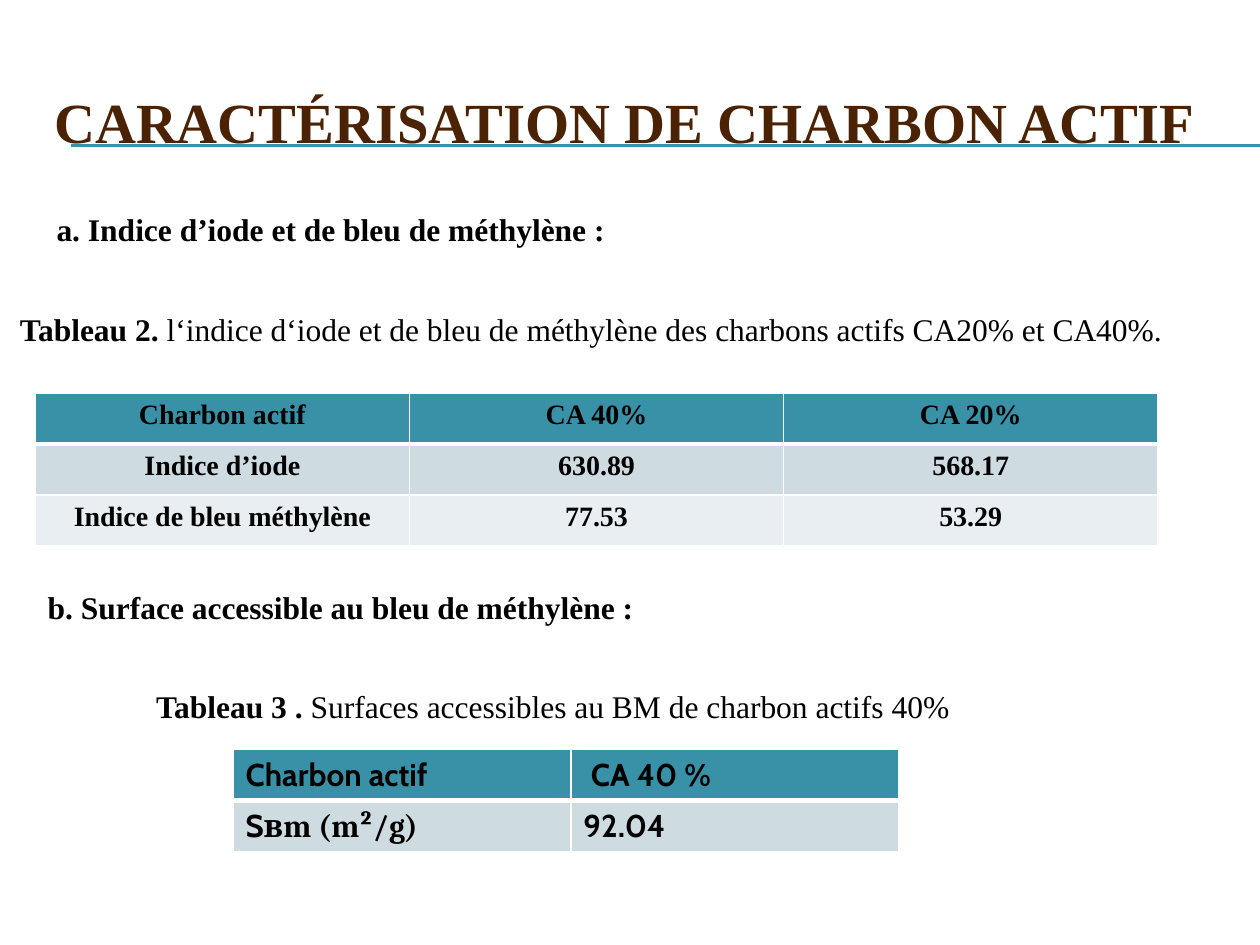
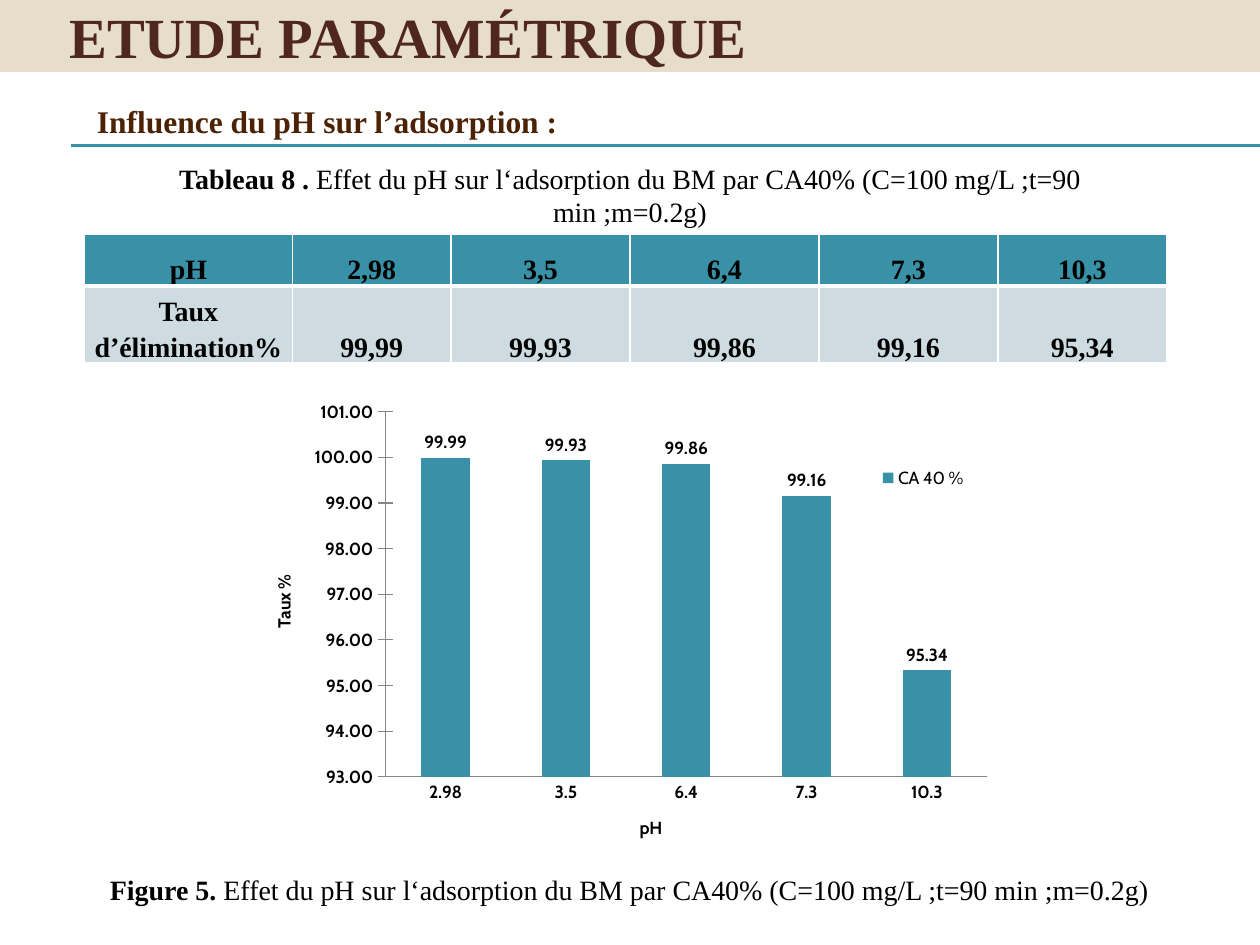
import lxml.etree
import pptx
import pptx.chart.data
import pptx.dml.color
import pptx.enum.chart
import pptx.enum.shapes
import pptx.enum.text
import pptx.oxml
import pptx.oxml.ns
import pptx.util

COLORS = {
    name: pptx.dml.color.RGBColor.from_string(value)
    for name, value in {
        "teal": "3891A7",
        "band": "CEDCE1",
        "pale": "E8EEF1",
        "sand": "E7DEC9",
        "brown": "4B2203",
        "maroon": "4F271C",
        "black": "000000",
        "white": "FFFFFF",
        "axis": "868686",
    }.items()
}
SERIF = "Times New Roman"
SANS = "Cabin"
CENTER = pptx.enum.text.PP_ALIGN.CENTER
LEFT = pptx.enum.text.PP_ALIGN.LEFT
qn = pptx.oxml.ns.qn

presentation = pptx.Presentation()
presentation.slide_width = pptx.util.Inches(10)
presentation.slide_height = pptx.util.Inches(7.5)
column = presentation.slide_width / 100
row = presentation.slide_height / 75


def add_text(slide, box, label, rest="", size=18, color="black", align=LEFT, spacing=None):
    left, top, width, height = box
    shape = slide.shapes.add_textbox(
        int(left * column), int(top * row), int(width * column), int(height * row)
    )
    shape.text_frame.word_wrap = True
    paragraph = shape.text_frame.paragraphs[0]
    paragraph.alignment = align
    paragraph.line_spacing = spacing
    paragraph.font.name = SERIF
    paragraph.font.size = pptx.util.Pt(size)
    paragraph.font.color.rgb = COLORS[color]
    for text, bold in ((label, True), (rest, False)):
        if text:
            run = paragraph.add_run()
            run.text = text
            run.font.bold = bold


def add_table(slide, left, top, widths, heights, rows, font=SERIF, size=16, align=CENTER):
    table = slide.shapes.add_table(
        len(rows), len(widths), int(left * column), int(top * row),
        int(sum(widths) * column), int(sum(heights) * row),
    ).table
    for table_column, width in zip(table.columns, widths):
        table_column.width = int(width * column)
    for index, (table_row, height, texts) in enumerate(zip(table.rows, heights, rows)):
        table_row.height = int(height * row)
        for cell, text in zip(table_row.cells, texts):
            cell.fill.solid()
            cell.fill.fore_color.rgb = COLORS[("teal", "band", "pale")[index]]
            paragraph = cell.text_frame.paragraphs[0]
            paragraph.alignment = align
            run = paragraph.add_run()
            run.text = text
            run.font.name = font
            run.font.size = pptx.util.Pt(size)
            run.font.bold = True
            run.font.color.rgb = COLORS["black"]
            properties = cell._tc.get_or_add_tcPr()
            weights = (1, 1, 3 if index == 1 else 1, 3 if index == 0 else 1)
            for position, (side, weight) in enumerate(zip("LRTB", weights)):
                border = lxml.etree.Element(qn(f"a:ln{side}"), w=str(pptx.util.Pt(weight)))
                fill = lxml.etree.SubElement(border, qn("a:solidFill"))
                lxml.etree.SubElement(fill, qn("a:srgbClr"), val=str(COLORS["white"]))
                properties.insert(position, border)
    return table


titles = (
    ("CARACTÉRISATION DE CHARBON ACTIF", "brown", (3.3, 5, 95, 9.2), 1),
    ("ETUDE PARAMÉTRIQUE", "maroon", (0, 0, 100, 5.7), 5.5),
)
for text, color, (left, top, width, height), indent in titles:
    slide = presentation.slides.add_slide(presentation.slide_layouts[5])
    title = slide.shapes.title
    title.left, title.top = int(left * column), int(top * row)
    title.width, title.height = int(width * column), int(height * row)
    title.text_frame.text = text
    title.text_frame.auto_size = pptx.enum.text.MSO_AUTO_SIZE.NONE
    title.text_frame.vertical_anchor = pptx.enum.text.MSO_ANCHOR.MIDDLE
    title.text_frame.margin_left = int(indent * column)
    paragraph = title.text_frame.paragraphs[0]
    paragraph.alignment = LEFT
    paragraph.font.name = SERIF
    paragraph.font.size = pptx.util.Pt(32.4)
    paragraph.font.bold = True
    paragraph.font.color.rgb = COLORS[color]
    for height in (11.5, 11.6):
        rule = slide.shapes.add_connector(
            pptx.enum.shapes.MSO_CONNECTOR.STRAIGHT,
            int(5.6 * column), int(height * row), int(100 * column), int(height * row),
        )
        rule.line.color.rgb = COLORS["teal"]
        rule.line.width = pptx.util.Pt(0.75)
        lxml.etree.SubElement(rule.element.spPr, qn("a:effectLst"))
        title.element.addprevious(rule.element)

characterisation, parametric = presentation.slides
parametric.shapes.title.fill.solid()
parametric.shapes.title.fill.fore_color.rgb = COLORS["sand"]

add_text(characterisation, (3.5, 16.2, 55.9, 7.1), "a. Indice d’iode et de bleu de méthylène :")
add_text(
    characterisation, (0.6, 24.1, 95.9, 4), "Tableau 2.",
    " l‘indice d‘iode et de bleu de méthylène des charbons actifs CA20% et CA40%.",
)
add_table(
    characterisation, 2.8, 31.2, [29.7] * 3, [4.05] * 3,
    (
        ("Charbon actif", "CA 40%", "CA 20%"),
        ("Indice d’iode", "630.89", "568.17"),
        ("Indice de bleu méthylène", "77.53", "53.29"),
    ),
)
add_text(characterisation, (2.8, 46.2, 50, 7.1), "b. Surface accessible au bleu de méthylène :")
add_text(
    characterisation, (11.4, 54, 67, 4), "Tableau 3 . ",
    "Surfaces accessibles au BM de charbon actifs 40%",
)
surface_table = add_table(
    characterisation, 18.5, 59.5, (26.8, 26), [4.05] * 2,
    (("Charbon actif", "CA 40 %"), ("S", "92.04")),
    font=SANS, size=18, align=LEFT,
)
surface_table.cell(0, 1).margin_left = int(1.6 * column)
unit = surface_table.cell(1, 0).text_frame.paragraphs[0].add_run()
unit.text = "ʙm (m²/g)"
unit.font.name = "Cambria"
unit.font.size = pptx.util.Pt(18)
unit.font.bold = True
unit.font.color.rgb = COLORS["black"]

levels = (2.98, 3.5, 6.4, 7.3, 10.3)
rates = (99.99, 99.93, 99.86, 99.16, 95.34)
caption = " Effet du pH sur l‘adsorption du BM par CA40% (C=100 mg/L ;t=90 min ;m=0.2g)"

add_text(
    parametric, (6.7, 7.6, 40.2, 4), "Influence du pH sur l’adsorption :", color="brown"
)
add_text(parametric, (7.5, 12.3, 85, 6.4), "Tableau 8 .", caption, size=16, align=CENTER)
rate_table = add_table(
    parametric, 6.7, 18.6, (16.5, 12.6, 14.2, 15, 14.2, 13.4), (4.1, 4.5),
    (
        ["pH"] + [str(level).replace(".", ",") for level in levels],
        ["Taux d’élimination%"] + [str(rate).replace(".", ",") for rate in rates],
    ),
)
for cell in rate_table.iter_cells():
    cell.vertical_anchor = pptx.enum.text.MSO_ANCHOR.BOTTOM
    cell.margin_left = cell.margin_right = int(0.5 * column)
    cell.margin_top = cell.margin_bottom = 0
    cell.text_frame.paragraphs[0].line_spacing = 1.15

chart_data = pptx.chart.data.CategoryChartData()
chart_data.categories = [str(level) for level in levels]
chart_data.add_series("CA 40 %", rates)
chart = parametric.shapes.add_chart(
    pptx.enum.chart.XL_CHART_TYPE.COLUMN_CLUSTERED,
    int(20.1 * column), int(31.2 * row), int(58.3 * column), int(36.7 * row), chart_data,
).chart
chart.has_title = False
chart.font.name = SANS
chart.font.size = pptx.util.Pt(10)
chart.font.color.rgb = COLORS["black"]
chart.has_legend = True
chart.legend.position = pptx.enum.chart.XL_LEGEND_POSITION.RIGHT
chart.legend.include_in_layout = False

plot = chart.plots[0]
plot.vary_by_categories = False
plot.gap_width = 150
plot.series[0].format.fill.solid()
plot.series[0].format.fill.fore_color.rgb = COLORS["teal"]
plot.has_data_labels = True
plot.data_labels.show_value = True
plot.data_labels.number_format = "0.00"
plot.data_labels.number_format_is_linked = False
plot.data_labels.position = pptx.enum.chart.XL_LABEL_POSITION.OUTSIDE_END
plot.data_labels.font.bold = True

tick_marks = pptx.enum.chart.XL_TICK_MARK
for axis, name, mark in (
    (chart.category_axis, "pH", tick_marks.NONE),
    (chart.value_axis, "Taux %", tick_marks.CROSS),
):
    axis.has_major_gridlines = False
    axis.major_tick_mark = mark
    axis.minor_tick_mark = tick_marks.NONE
    axis.format.line.color.rgb = COLORS["axis"]
    axis.tick_labels.font.bold = True
    axis.axis_title.text_frame.text = name
    font = axis.axis_title.text_frame.paragraphs[0].runs[0].font
    font.name = SANS
    font.size = pptx.util.Pt(10)
    font.bold = True
    font.color.rgb = COLORS["black"]
chart.value_axis.minimum_scale = 93
chart.value_axis.maximum_scale = 101
chart.value_axis.major_unit = 1
chart.value_axis.tick_labels.number_format = "0.00"
chart.value_axis.tick_labels.number_format_is_linked = False

chart_element = chart.element.find(qn("c:chart"))
for tag, position, shares in (
    ("c:plotArea", 0, {"x": 0.18, "y": 0.04, "w": 0.82, "h": 0.79}),
    ("c:legend", 1, {"x": 0.85, "y": 0.15}),
):
    parent = chart_element.find(qn(tag))
    for existing in parent.findall(qn("c:layout")):
        parent.remove(existing)
    layout = lxml.etree.Element(qn("c:layout"))
    manual = lxml.etree.SubElement(layout, qn("c:manualLayout"))
    if tag == "c:plotArea":
        lxml.etree.SubElement(manual, qn("c:layoutTarget"), val="inner")
    for key in "xy":
        lxml.etree.SubElement(manual, qn(f"c:{key}Mode"), val="edge")
    for key, share in shares.items():
        lxml.etree.SubElement(manual, qn(f"c:{key}"), val=str(share))
    parent.insert(position, layout)

add_text(
    parametric, (3.5, 67.4, 92.9, 5), "Figure 5.", caption,
    size=16, align=CENTER, spacing=1.5,
)

presentation.save("out.pptx")
